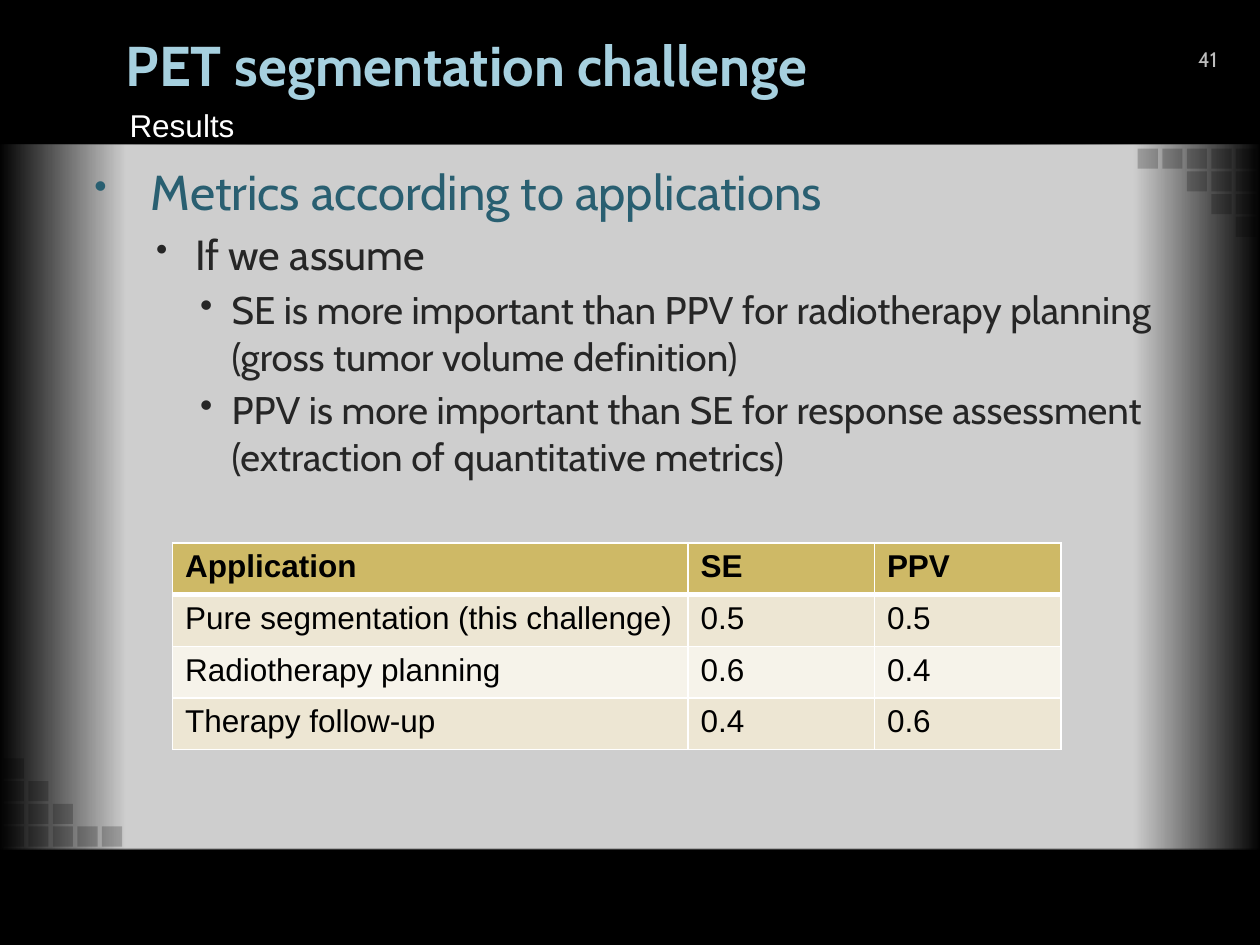
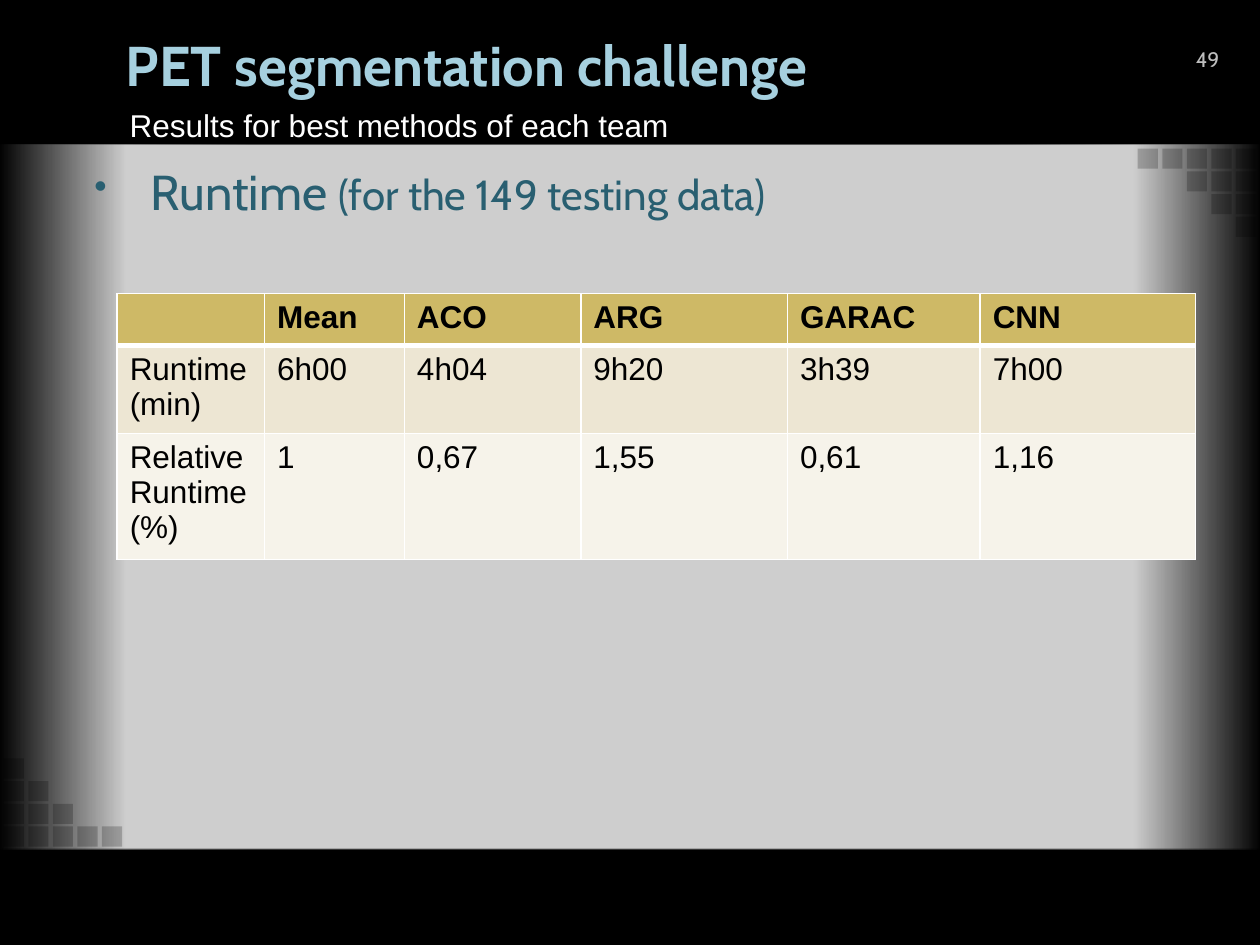
import pptx
import pptx.util
import pptx.dml.color
import pptx.enum.shapes
import pptx.enum.text
import pptx.oxml
from lxml import etree

Inches = pptx.util.Inches
Pt = pptx.util.Pt
NS = 'xmlns:a="http://schemas.openxmlformats.org/drawingml/2006/main"'
SHAPE = pptx.enum.shapes.MSO_SHAPE
ALIGN = pptx.enum.text.PP_ALIGN
ANCHOR = pptx.enum.text.MSO_ANCHOR


def rgb(code):
    return pptx.dml.color.RGBColor.from_string(code)


def style(para, size, color, face="Cabin", bold=False):
    font = para.font
    font.name, font.size, font.bold = face, Pt(size), bold
    font.color.rgb = rgb(color)


# Shared look
TITLE = "PET segmentation challenge"
HEAD, BANDS = "CEB966", ["EDE6D3", "F6F3EA"]
# Gradient stops: position and opacity, in percent
GLOW = [(0, 0), (10, 80), (90, 80), (100, 0)]
SHADE = [(0, 16), (20, 70), (78, 70), (100, 15)]
# Top, height, colour, stops
PANELS = [(1.15, 5.59, "FFFFFF", GLOW),
          (6.74, 0.76, "000000", SHADE),
          (0, 1.15, "000000", SHADE)]
SIDE, STEP_X, STEP_Y = 0.16, 0.78 / 4, 0.18
# Left indent, hanging indent, bullet percent, colour, size, space before
LEVELS = [(0.6, 0.45, 75, "295F71", 28, 0),
          (0.95, 0.31, 80, "262626", 24, 4.8),
          (1.24, 0.25, 95, "262626", 22, 4.4)]

# What each slide says; a body line is a level and its (text, size) runs
SLIDES = [
    dict(num="41", sub="Results", sub_w=1.04,
         body=[(0, [("Metrics according to applications", 28)]),
               (1, [("If we assume", 24)]),
               (2, [("SE is more important than PPV for radiotherapy planning "
                     "(gross tumor volume definition)", 22)]),
               (2, [("PPV is more important than SE for response assessment "
                     "(extraction of quantitative metrics)", 22)])],
         at=(1.37, 4.31), cols=[4.09, 1.48, 1.48], tall=[0.41] * 4,
         rows=[["Application", "SE", "PPV"],
               ["Pure segmentation (this challenge)", "0.5", "0.5"],
               ["Radiotherapy planning", "0.6", "0.4"],
               ["Therapy follow-up", "0.4", "0.6"]]),
    dict(num="49", sub="Results for best methods of each team", sub_w=4.52,
         body=[(0, [("Runtime ", 28), ("(for the 149 testing data)", 24)])],
         at=(0.93, 2.33), cols=[1.17, 1.11, 1.4, 1.64, 1.53, 1.71],
         tall=[0.41, 0.7, 1],
         rows=[["", "Mean", "ACO", "ARG", "GARAC", "CNN"],
               ["Runtime (min)", "6h00", "4h04", "9h20", "3h39", "7h00"],
               ["Relative Runtime (%)", "1", "0,67", "1,55", "0,61", "1,16"]]),
]

deck = pptx.Presentation()
deck.slide_width, deck.slide_height = Inches(10), Inches(7.5)

for data in SLIDES:
    slide = deck.slides.add_slide(deck.slide_layouts[6])
    shapes = slide.shapes
    slide.background.fill.solid()
    slide.background.fill.fore_color.rgb = rgb("000000")

    # Glowing panel and dark bands
    for top, height, color, stops in PANELS:
        panel = shapes.add_shape(SHAPE.RECTANGLE, 0, Inches(top),
                                 Inches(10), Inches(height))
        panel.shadow.inherit = False
        panel.line.fill.background()
        marks = "".join(
            f'<a:gs pos="{pos * 1000}"><a:srgbClr val="{color}">'
            f'<a:alpha val="{alpha * 1000}"/></a:srgbClr></a:gs>'
            for pos, alpha in stops)
        grad = pptx.oxml.parse_xml(
            f'<a:gradFill {NS} rotWithShape="1"><a:gsLst>{marks}</a:gsLst>'
            '<a:lin ang="0" scaled="0"/></a:gradFill>')
        panel._element.spPr.find(pptx.oxml.ns.qn("a:prstGeom")).addnext(grad)

    # Stairs of squares, top right and turned round at bottom left
    for row, first in enumerate([0, 2, 3, 4]):
        for col in range(first, 5):
            x, y = 9.03 + col * STEP_X, 1.18 + row * STEP_Y
            for left, top in [(x, y), (10 - SIDE - x, 7.74 - y)]:
                box = shapes.add_shape(SHAPE.RECTANGLE, Inches(left), Inches(top),
                                       Inches(SIDE), Inches(SIDE))
                box.shadow.inherit = False
                box.line.fill.background()
                box.fill.solid()
                box.fill.fore_color.rgb = rgb("000000")
                tint = box._element.spPr.find(".//" + pptx.oxml.ns.qn("a:srgbClr"))
                etree.SubElement(tint, pptx.oxml.ns.qn("a:alpha"), val="21000")

    # Bulleted body
    frame = shapes.add_textbox(Inches(0.5), Inches(1.23),
                               Inches(9), Inches(5.43)).text_frame
    frame.word_wrap = True
    for i, (level, runs) in enumerate(data["body"]):
        left, hang, scale, color, size, space = LEVELS[level]
        para = frame.add_paragraph() if i else frame.paragraphs[0]
        para.level = level
        props = para._p.get_or_add_pPr()
        props.set("marL", str(Inches(left)))
        props.set("indent", str(-Inches(hang)))
        etree.SubElement(props, pptx.oxml.ns.qn("a:buSzPct"), val=str(scale * 1000))
        etree.SubElement(props, pptx.oxml.ns.qn("a:buChar"), char="•")
        if space:
            para.space_before = Pt(space)
        style(para, size, color)
        for text, points in runs:
            run = para.add_run()
            run.text = text
            if points != size:
                run.font.size = Pt(points)

    # Slide number
    frame = shapes.add_textbox(Inches(9.17), Inches(0.27),
                               Inches(0.83), Inches(0.4)).text_frame
    frame.margin_left = frame.margin_right = 0
    frame.vertical_anchor = ANCHOR.MIDDLE
    frame.word_wrap = True
    frame.text = data["num"]
    frame.paragraphs[0].alignment = ALIGN.CENTER
    style(frame.paragraphs[0], 12, "BDBDBD")

    # Title and subtitle
    frame = shapes.add_textbox(Inches(0.9), Inches(0.13),
                               Inches(8.6), Inches(0.87)).text_frame
    frame.vertical_anchor = ANCHOR.MIDDLE
    frame.word_wrap = True
    frame.text = TITLE
    frame.paragraphs[0].line_spacing = Pt(30)
    style(frame.paragraphs[0], 32, "A6D0DF", bold=True)
    frame = shapes.add_textbox(Inches(0.93), Inches(0.79),
                               Inches(data["sub_w"]), Inches(0.4)).text_frame
    frame.word_wrap = False
    frame.text = data["sub"]
    style(frame.paragraphs[0], 18, "FFFFFF", "Arial")

    # Table with white rules, thicker under the head row
    rows, cols, tall = data["rows"], data["cols"], data["tall"]
    left, top = data["at"]
    table = shapes.add_table(len(rows), len(cols), Inches(left), Inches(top),
                             Inches(sum(cols)), Inches(sum(tall))).table
    for col, width in enumerate(cols):
        table.columns[col].width = Inches(width)
    for r, texts in enumerate(rows):
        table.rows[r].height = Inches(tall[r])
        for c, text in enumerate(texts):
            cell = table.cell(r, c)
            cell.text = text
            style(cell.text_frame.paragraphs[0], 18, "000000", "Arial", r == 0)
            cell.fill.solid()
            cell.fill.fore_color.rgb = rgb(BANDS[(r - 1) % 2] if r else HEAD)
            for i, edge in enumerate("LRTB"):
                thick = 3 if (r, edge) in [(0, "B"), (1, "T")] else 1
                rule = pptx.oxml.parse_xml(
                    f'<a:ln{edge} {NS} w="{Pt(thick)}"><a:solidFill>'
                    f'<a:srgbClr val="FFFFFF"/></a:solidFill></a:ln{edge}>')
                cell._tc.get_or_add_tcPr().insert(i, rule)

deck.save("out.pptx")
